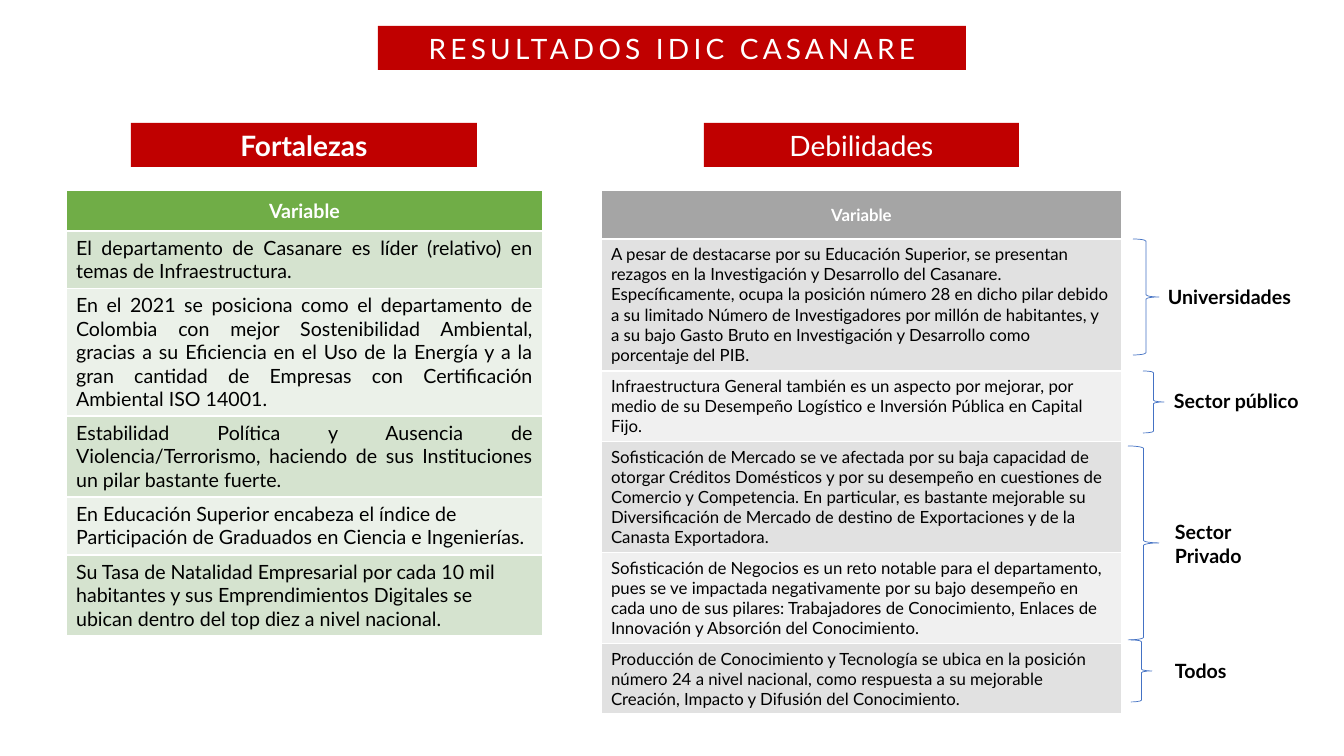
from pptx import Presentation
from pptx.dml.color import RGBColor
from pptx.enum.shapes import MSO_SHAPE as Shape
from pptx.enum.text import MSO_ANCHOR as Anchor, MSO_AUTO_SIZE as AutoSize, PP_ALIGN as Align
from pptx.util import Pt

# Content: lengths in px
EMU_PER_PX = 914400 / 100.8
FONT, RED, WHITE, BLACK, BLUE = "Lato", "C00000", "FFFFFF", "000000", "4472C4"
TITLE = ("RESULTADOS IDIC CASANARE", (378, 26, 588, 44))
HEADINGS = [
    ("Fortalezas", (131, 123, 346, 44), True),
    ("Debilidades", (704, 123, 315, 44), False),
]
STRENGTHS = {
    "box": (66, 190, 477), "size": 14, "justified": 3,
    "header": "70AD47", "bands": ("D5E3CF", "EBF1E9"),
    "rows": [
        ("Variable", 41),
        ("El departamento de Casanare es líder (relativo) en temas de Infraestructura.", 57),
        ("En el 2021 se posiciona como el departamento de Colombia con mejor Sostenibilidad "
         "Ambiental, gracias a su Eficiencia en el Uso de la Energía y a la gran cantidad de "
         "Empresas con Certificación Ambiental ISO 14001.", 127),
        ("Estabilidad Política y Ausencia de Violencia/Terrorismo, haciendo de sus "
         "Instituciones un pilar bastante fuerte.", 81),
        ("En Educación Superior encabeza el índice de Participación de Graduados en Ciencia "
         "e Ingenierías.", 58),
        ("Su Tasa de Natalidad Empresarial por cada 10 mil habitantes y sus Emprendimientos "
         "Digitales se ubican dentro del top diez a nivel nacional.", 79),
    ],
}
WEAKNESSES = {
    "box": (601, 190, 521), "size": 12, "justified": 0,
    "header": "A5A5A5", "bands": ("E1E1E1", "F0F0F0"),
    "rows": [
        ("Variable", 49),
        ("A pesar de destacarse por su Educación Superior, se presentan rezagos en la "
         "Investigación y Desarrollo del Casanare. Específicamente, ocupa la posición número 28 "
         "en dicho pilar debido a su limitado Número de Investigadores por millón de habitantes, "
         "y a su bajo Gasto Bruto en Investigación y Desarrollo como porcentaje del PIB.", 132),
        ("Infraestructura General también es un aspecto por mejorar, por medio de su Desempeño "
         "Logístico e Inversión Pública en Capital Fijo.", 70),
        ("Sofisticación de Mercado se ve afectada por su baja capacidad de otorgar Créditos "
         "Domésticos y por su desempeño en cuestiones de Comercio y Competencia. En particular, "
         "es bastante mejorable su Diversificación de Mercado de destino de Exportaciones y de "
         "la Canasta Exportadora.", 111),
        ("Sofisticación de Negocios es un reto notable para el departamento, pues se ve impactada "
         "negativamente por su bajo desempeño en cada uno de sus pilares: Trabajadores de "
         "Conocimiento, Enlaces de Innovación y Absorción del Conocimiento.", 90),
        ("Producción de Conocimiento y Tecnología se ubica en la posición número 24 a nivel "
         "nacional, como respuesta a su mejorable Creación, Impacto y Difusión del "
         "Conocimiento.", 70),
    ],
}
# Label, label box, brace box
ACTORS = [
    ("Universidades", (1158, 280, 170, 34), (1133, 239, 26, 116)),
    ("Sector público", (1164, 384, 170, 34), (1143, 371, 21, 62)),
    ("Sector\nPrivado", (1165, 515, 170, 57), (1128, 446, 31, 194)),
    ("Todos", (1165, 654, 98, 34), (1131, 640, 21, 62)),
]


def px(length):
    return round(length * EMU_PER_PX)


def color(value):
    return RGBColor.from_string(value)


def write(frame, text, size, text_color, bold=False, align=Align.LEFT):
    frame.text = text
    for paragraph in frame.paragraphs:
        paragraph.alignment = align
        for run in paragraph.runs:
            font = run.font
            font.name, font.size, font.bold = FONT, Pt(size), bold
            font.color.rgb = color(text_color)


def fill_banner(shape, text, bold=False):
    shape.fill.solid()
    shape.fill.fore_color.rgb = color(RED)
    frame = shape.text_frame
    frame.auto_size = AutoSize.NONE
    frame.vertical_anchor = Anchor.MIDDLE
    write(frame, text, 20, WHITE, bold, Align.CENTER)


def add_variable_table(slide, data):
    rows = data["rows"]
    height = sum(row_height for _, row_height in rows)
    table = slide.shapes.add_table(len(rows), 1, *map(px, (*data["box"], height))).table
    for index, (text, row_height) in enumerate(rows):
        table.rows[index].height = px(row_height)
        cell = table.cell(index, 0)
        is_header = index == 0
        if is_header:
            cell.vertical_anchor = Anchor.MIDDLE
            align = Align.CENTER
        else:
            align = Align.JUSTIFY if index <= data["justified"] else Align.LEFT
        cell.fill.solid()
        cell.fill.fore_color.rgb = color(
            data["header"] if is_header else data["bands"][(index - 1) % 2])
        write(cell.text_frame, text, data["size"], WHITE if is_header else BLACK, is_header, align)


presentation = Presentation()
presentation.slide_width, presentation.slide_height = px(1344), px(756)
slide = presentation.slides.add_slide(presentation.slide_layouts[5])
shapes = slide.shapes

# Title, with letters spaced by 3 pt
title = shapes.title
title.left, title.top, title.width, title.height = map(px, TITLE[1])
fill_banner(title, TITLE[0])
title.text_frame.word_wrap = False
title.text_frame.paragraphs[0].runs[0].font._element.set("spc", "300")

# Column headings
for text, box, bold in HEADINGS:
    heading = shapes.add_shape(Shape.RECTANGLE, *map(px, box))
    heading.shadow.inherit = False
    heading.line.fill.background()
    fill_banner(heading, text, bold)

# Tables
for data in (STRENGTHS, WEAKNESSES):
    add_variable_table(slide, data)

# Braces and the actors they point to
for text, label_box, brace_box in ACTORS:
    brace = shapes.add_shape(Shape.RIGHT_BRACE, *map(px, brace_box))
    brace.shadow.inherit = False
    brace.fill.background()
    brace.line.color.rgb = color(BLUE)
    brace.line.width = Pt(0.5)
    label = shapes.add_textbox(*map(px, label_box))
    label.text_frame.word_wrap = True
    write(label.text_frame, text, 14, BLACK, True)

presentation.save("out.pptx")
